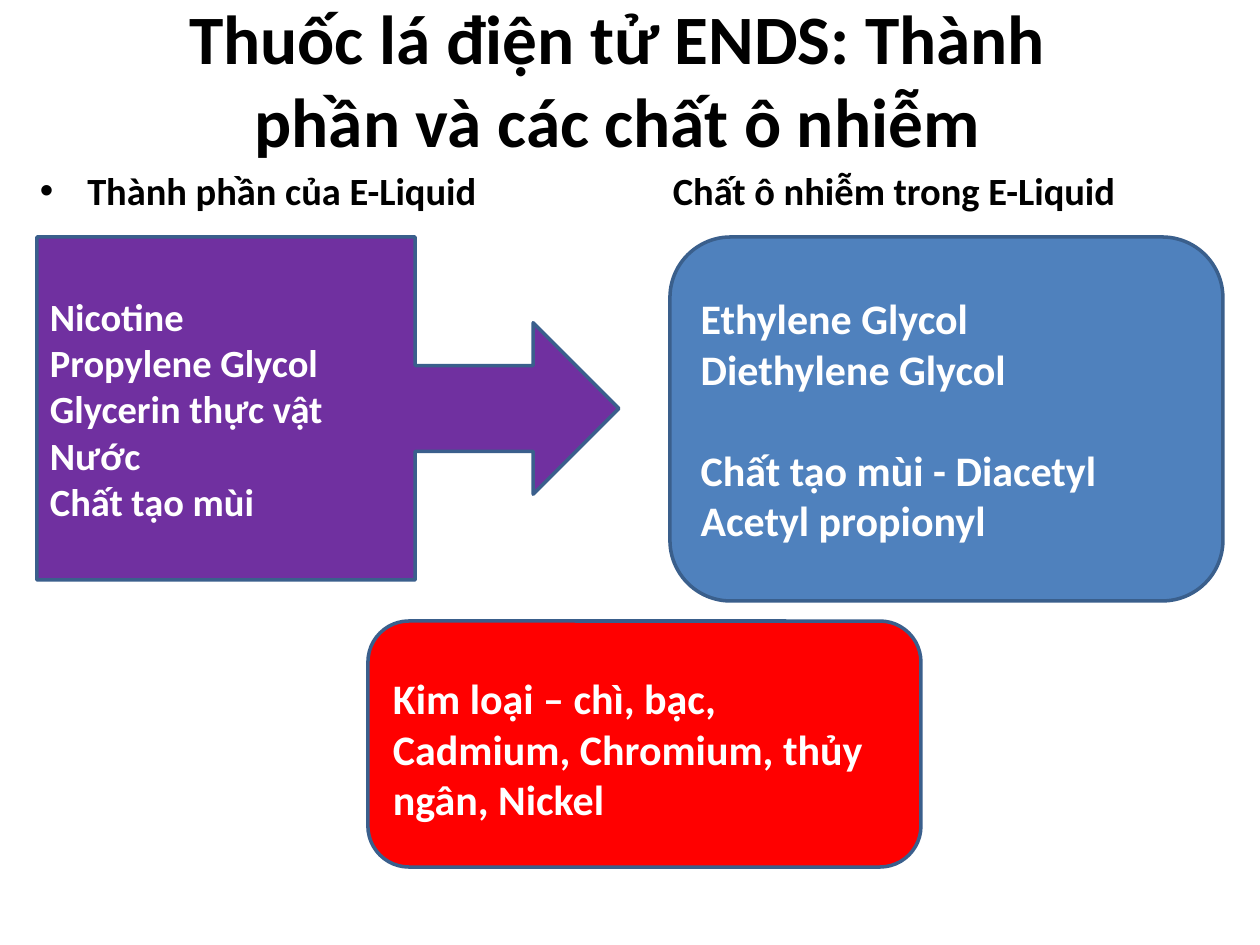
import pptx
import pptx.util
import pptx.dml.color
import pptx.enum.shapes
import pptx.enum.text

RGBColor = pptx.dml.color.RGBColor
BLACK = RGBColor(0x00, 0x00, 0x00)
WHITE = RGBColor(0xFF, 0xFF, 0xFF)
BLUE = RGBColor(0x4F, 0x81, 0xBD)
PURPLE = RGBColor(0x70, 0x30, 0xA0)
RED = RGBColor(0xFF, 0x00, 0x00)
OUTLINE = RGBColor(0x3A, 0x5F, 0x8C)

PX = 914400 / 126
SHAPE = pptx.enum.shapes.MSO_SHAPE
ALIGN = pptx.enum.text.PP_ALIGN


def px(*lengths):
    return [pptx.util.Emu(round(n * PX)) for n in lengths]


def write(shape, lines, size, color, align, insets=(13, 6, 13, 6)):
    """Fill a shape with bold, vertically centred Calibri text."""
    frame = shape.text_frame
    frame.text = "\n".join(lines)
    frame.word_wrap = True
    frame.auto_size = pptx.enum.text.MSO_AUTO_SIZE.NONE
    frame.vertical_anchor = pptx.enum.text.MSO_ANCHOR.MIDDLE
    (frame.margin_left, frame.margin_top,
     frame.margin_right, frame.margin_bottom) = px(*insets)
    for paragraph in frame.paragraphs:
        paragraph.alignment = align
        for run in paragraph.runs:
            run.font.name = "Calibri"
            run.font.size = pptx.util.Pt(size)
            run.font.bold = True
            run.font.color.rgb = color
    return frame.paragraphs


deck = pptx.Presentation()
deck.slide_width, deck.slide_height = px(1260, 945)
slide = deck.slides.add_slide(deck.slide_layouts[1])

# Title
title = slide.shapes.title
title.left, title.top, title.width, title.height = px(171, 28, 893, 100)
write(title, ["Thuốc lá điện tử ENDS: Thành phần và các chất ô nhiễm"],
      39.6, BLACK, ALIGN.CENTER)

# Column headings: the left one keeps the template's bullet
ingredients_heading = slide.placeholders[1]
(ingredients_heading.left, ingredients_heading.top,
 ingredients_heading.width, ingredients_heading.height) = px(37, 161, 489, 59)
write(ingredients_heading, ["Thành phần của E-Liquid"],
      22, BLACK, ALIGN.LEFT, (3, 6, 13, 6))

contaminants_heading = slide.shapes.add_textbox(*px(670, 158, 489, 59))
heading_line = write(contaminants_heading, ["Chất ô nhiễm trong E-Liquid"],
                     22, BLACK, ALIGN.LEFT, (3, 0, 3, 0))[0]
heading_line.line_spacing = 1.1
heading_line.space_before = pptx.util.Pt(10)
heading_line.space_after = pptx.util.Pt(6)

# Panels: preset, position, fill, text size, top inset, lines
panels = [
    (SHAPE.ROUNDED_RECTANGLE, (670, 237, 553, 364), BLUE, 24, 6,
     ["Ethylene Glycol", "Diethylene Glycol",
      "Chất tạo mùi - Diacetyl", "Acetyl propionyl"]),
    (SHAPE.RIGHT_ARROW_CALLOUT, (37, 237, 582, 343), PURPLE, 22, 6,
     ["Nicotine", "Propylene Glycol", "Glycerin thực vật",
      "Nước", "Chất tạo mùi"]),
    (SHAPE.ROUNDED_RECTANGLE, (368, 621, 553, 246), RED, 24, 15,
     ["Kim loại – chì, bạc, Cadmium, Chromium, thủy ngân, Nickel"]),
]
for preset, place, fill, size, top_inset, lines in panels:
    panel = slide.shapes.add_shape(preset, *px(*place))
    panel.shadow.inherit = False
    panel.fill.solid()
    panel.fill.fore_color.rgb = fill
    panel.line.color.rgb = OUTLINE
    panel.line.width = pptx.util.Pt(2)
    paragraphs = write(panel, lines, size, WHITE, ALIGN.LEFT,
                       (13, top_inset, 13, 6))
    # One line of space sets the flavourings apart from the glycols
    if fill == BLUE:
        paragraphs[2].space_before = pptx.util.Pt(29)

deck.save("out.pptx")
